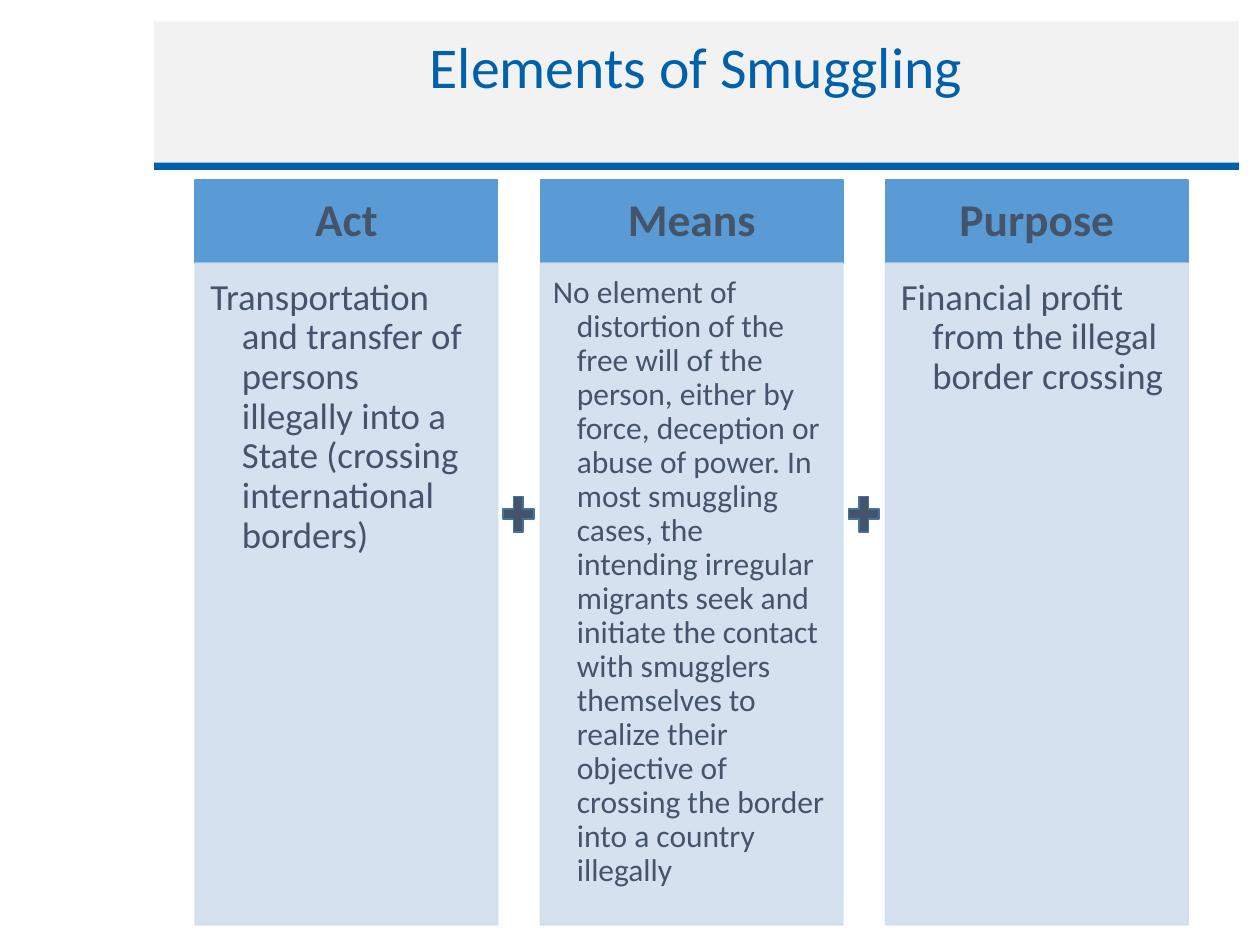
"""Build a slide that sets out the three elements of smuggling."""
from lxml.etree import SubElement
from pptx import Presentation
from pptx.dml.color import RGBColor
from pptx.enum.shapes import MSO_CONNECTOR, MSO_SHAPE
from pptx.enum.text import MSO_ANCHOR, PP_ALIGN
from pptx.oxml.ns import qn
from pptx.util import Inches, Pt

BLUE = RGBColor(0x00, 0x61, 0xAA)
GREY = RGBColor(0xF2, 0xF2, 0xF2)
HEAD = RGBColor(0x5B, 0x9B, 0xD5)
BODY = RGBColor(0xD2, 0xDE, 0xEF)
SLATE = RGBColor(0x44, 0x54, 0x6A)
EDGE = RGBColor(0x43, 0x73, 0x9E)

LEFT, PITCH, WIDTH = 1.55, 2.74, 2.4
ROOMY = {"size": 21, "pad": (0.12, 0.12, 0.16, 0.18), "hang": 0.25}
TIGHT = {"size": 18, "pad": (0.1, 0.1, 0.14, 0.16), "hang": 0.19}
COLUMNS = [
    ("Act", "Transportation and transfer of persons illegally into a State "
     "(crossing international borders)", ROOMY),
    ("Means", "No element of distortion of the free will of the person, either by "
     "force, deception or abuse of power. In most smuggling cases, the intending "
     "irregular migrants seek and initiate the contact with smugglers themselves to "
     "realize their objective of crossing the border into a country illegally", TIGHT),
    ("Purpose", "Financial profit from the illegal border crossing", ROOMY),
]


def add_block(slide, kind, box, fill, line=None):
    """Add a flat filled shape, outlined when a line colour is given."""
    shape = slide.shapes.add_shape(kind, *map(Inches, box))
    shape.shadow.inherit = False
    shape.fill.solid()
    shape.fill.fore_color.rgb = fill
    if line is None:
        shape.line.fill.background()
    else:
        shape.line.color.rgb = line
        shape.line.width = Pt(1)
    return shape


def fade(shape, percent):
    """Make the fill and line of a shape partly transparent."""
    for color in shape._element.spPr.iter(qn("a:srgbClr")):
        SubElement(color, qn("a:alpha"), val=str(percent * 1000))


def write(shape, text, size, pad, color=SLATE, bold=False, align=PP_ALIGN.LEFT,
          anchor=MSO_ANCHOR.TOP, spacing=0.9, hang=0):
    """Put one formatted paragraph in a shape."""
    frame = shape.text_frame
    frame.word_wrap = True
    frame.vertical_anchor = anchor
    for side, inset in zip(("left", "top", "right", "bottom"), pad):
        setattr(frame, f"margin_{side}", Inches(inset))
    para = frame.paragraphs[0]
    para.alignment = align
    para.line_spacing = spacing
    if hang:
        props = para._p.get_or_add_pPr()
        props.set("marL", str(Inches(hang)))
        props.set("indent", str(-Inches(hang)))
    run = para.add_run()
    run.text = text
    run.font.color.rgb = color
    for name, value in {"name": "Calibri", "size": Pt(size), "bold": bold}.items():
        setattr(run.font, name, value)


def add_title(slide, text):
    """Add the title band and the rule below it."""
    rule = slide.shapes.add_connector(
        MSO_CONNECTOR.STRAIGHT, Inches(1.22), Inches(1.32), Inches(9.83), Inches(1.32))
    rule.line.color.rgb = BLUE
    rule.line.width = Pt(4.5)
    SubElement(rule._element.spPr, qn("a:effectLst"))
    band = add_block(slide, MSO_SHAPE.RECTANGLE, (1.22, 0.17, 8.61, 1.12), GREY)
    write(band, text, 33, (0.2, 0.2, 0.2, 0.05), color=BLUE,
          align=PP_ALIGN.CENTER, spacing=0.75)


def add_column(slide, left, head, body, style):
    """Add a heading block with its description below."""
    top = add_block(slide, MSO_SHAPE.RECTANGLE, (left, 1.43, WIDTH, 0.66), HEAD, HEAD)
    write(top, head, 26, (0.2, 0.12, 0.2, 0.12), bold=True,
          align=PP_ALIGN.CENTER, anchor=MSO_ANCHOR.MIDDLE)
    panel = add_block(slide, MSO_SHAPE.RECTANGLE, (left, 2.09, WIDTH, 5.25), BODY, BODY)
    fade(panel, 90)
    write(panel, body, **style)


def main():
    """Build and save the slide."""
    deck = Presentation()
    deck.slide_width, deck.slide_height = Inches(10), Inches(7.5)
    slide = deck.slides.add_slide(deck.slide_layouts[6])
    add_title(slide, "Elements of Smuggling")
    for index, column in enumerate(COLUMNS):
        add_column(slide, LEFT + index * PITCH, *column)
    for index in range(len(COLUMNS) - 1):
        left = LEFT + WIDTH + index * PITCH
        add_block(slide, MSO_SHAPE.MATH_PLUS, (left, 3.89, 0.33, 0.38), SLATE, EDGE)
    deck.save("out.pptx")


if __name__ == "__main__":
    main()
